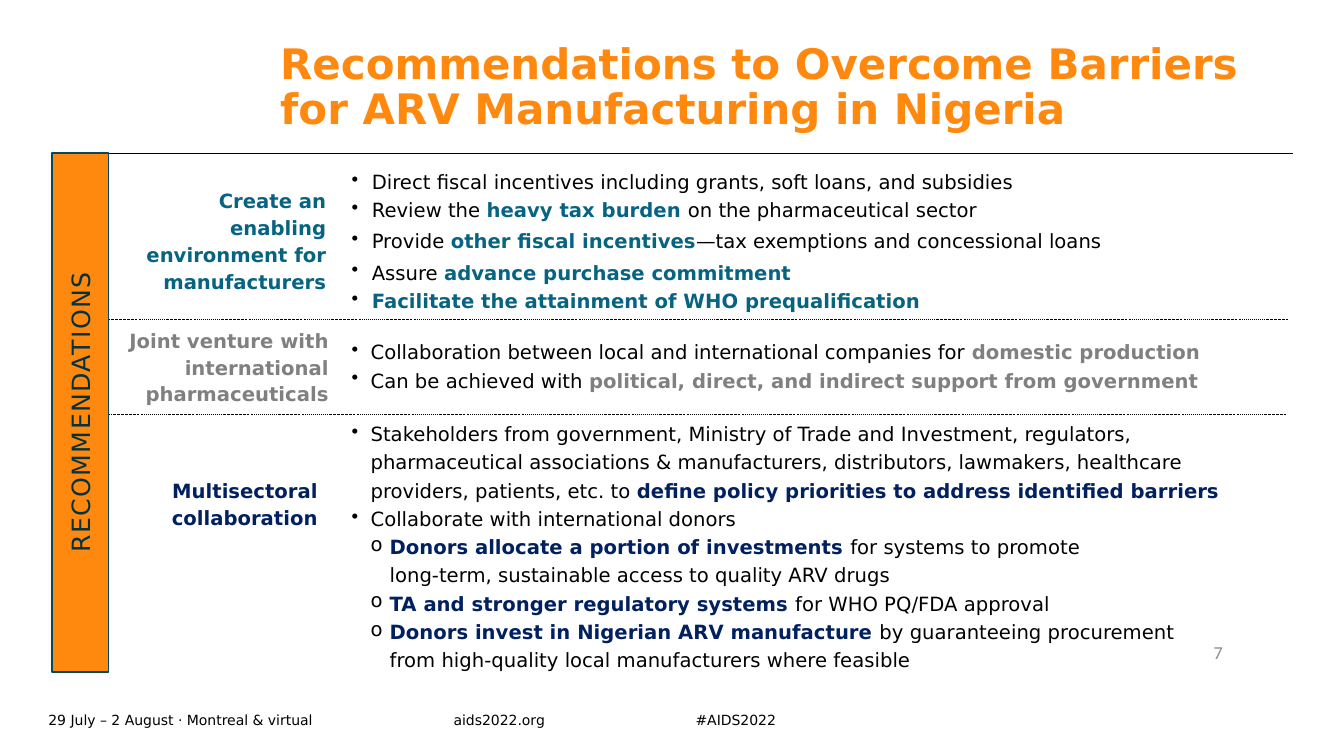
import pptx
import pptx.util
import pptx.dml.color
import pptx.enum.dml
import pptx.enum.shapes
import pptx.enum.text
import pptx.oxml.ns
from lxml import etree
from pptx.util import Cm, Pt

RGBColor = pptx.dml.color.RGBColor
ALIGN = pptx.enum.text.PP_ALIGN
ANCHOR = pptx.enum.text.MSO_ANCHOR
SHAPE = pptx.enum.shapes.MSO_SHAPE

ORANGE = RGBColor(0xFF, 0x89, 0x0E)
TEAL = RGBColor(0x07, 0x63, 0x82)
GRAY = RGBColor(0x80, 0x80, 0x80)
NAVY = RGBColor(0x00, 0x20, 0x60)
BLACK = RGBColor(0, 0, 0)
NUMBER_GRAY = RGBColor(0x8C, 0x8C, 0x8C)
BAR_LINE = RGBColor(0x05, 0x49, 0x60)
BAR_TEXT = RGBColor(0x04, 0x32, 0x41)

FONT = "DejaVu Sans"
NO_INSETS = (0, 0, 0, 0)
BODY_INSETS = (0.2, 0.13, 0.25, 0.13)
DEFAULT_INSETS = (0.25, 0.13, 0.25, 0.13)

FOOTERS = [
    (1.22, 10.21, "29 July – 2 August · Montreal & virtual"),
    (11.43, 4.9, "aids2022.org"),
    (17.53, 4.9, "#AIDS2022"),
]
RULES = [
    (1.35, 32.59, 3.86, False),
    (1.35, 32.44, 8.05, True),
    (1.3, 32.41, 10.44, True),
]
LABELS = [
    ((2.87, 4.45, 5.51, 3.18), "Create an enabling environment for manufacturers", TEAL, 0.25, 6),
    ((1.63, 8.15, 6.76, 2.13), "Joint venture with international pharmaceuticals", GRAY, 0, 6),
    ((0.51, 10.34, 7.9, 4.65), "Multisectoral \ncollaboration ", NAVY, 0, 2),
]
ENABLING = [
    (0, "Direct fiscal incentives including grants, soft loans, and subsidies"),
    (0, "Review the *heavy tax burden *on the pharmaceutical sector"),
    (0, "Provide *other fiscal incentives*—tax exemptions and concessional loans"),
    (0, "Assure *advance purchase commitment*"),
    (0, "*Facilitate the attainment of WHO prequalification*"),
]
VENTURES = [
    (0, "Collaboration between local and international companies for *domestic production*"),
    (0, "Can be achieved with *political, direct, and indirect support from government*"),
]
COLLABORATION = [
    (0, "Stakeholders from government, Ministry of Trade and Investment, regulators, "
        "pharmaceutical associations & manufacturers, distributors, lawmakers, healthcare "
        "providers, patients, etc. to *define policy priorities to address identified barriers*"),
    (0, "Collaborate with international donors"),
    (1, "*Donors allocate a portion of investments *for systems to promote \n"
        "long-term, sustainable access to quality ARV drugs"),
    (1, "*TA and stronger regulatory systems *for WHO PQ/FDA approval"),
    (1, "*Donors invest in Nigerian ARV manufacture *by guaranteeing procurement \n"
        "from high-quality local manufacturers where feasible"),
]


def place(shape, box):
    """Set left, top, width and height in centimetres."""
    shape.left, shape.top, shape.width, shape.height = map(Cm, box)


def set_frame(shape, insets, anchor):
    """Set the wrapping, insets and anchor of a shape and return its text frame."""
    frame = shape.text_frame
    frame.word_wrap = True
    frame.auto_size = pptx.enum.text.MSO_AUTO_SIZE.NONE
    frame.vertical_anchor = anchor
    frame.margin_left, frame.margin_top, frame.margin_right, frame.margin_bottom = map(Cm, insets)
    return frame


def set_font(paragraph, size, color, bold=False, name=FONT):
    """Format the font of a whole paragraph."""
    font = paragraph.font
    font.name, font.size, font.bold = name, Pt(size), bold
    font.color.rgb = color


def add_text(slide, box, text, size, color, insets=NO_INSETS, align=ALIGN.LEFT, name=FONT):
    """Add a one-paragraph text box centred vertically."""
    shape = slide.shapes.add_textbox(*map(Cm, box))
    paragraph = set_frame(shape, insets, ANCHOR.MIDDLE).paragraphs[0]
    paragraph.text = text
    paragraph.alignment = align
    set_font(paragraph, size, color, name=name)


def add_rule(slide, left, right, y, dashed):
    """Add a thin horizontal line."""
    line = slide.shapes.add_connector(
        pptx.enum.shapes.MSO_CONNECTOR.STRAIGHT, Cm(left), Cm(y), Cm(right), Cm(y))
    line.line.color.rgb = BLACK
    line.line.width = Pt(0.25)
    if dashed:
        line.line.dash_style = pptx.enum.dml.MSO_LINE.DASH_DOT
    etree.SubElement(line._element.spPr, pptx.oxml.ns.qn("a:effectLst"))


def add_label(slide, box, text, color, left_inset, space_after):
    """Add a right-aligned row heading in an unfilled rounded rectangle."""
    shape = slide.shapes.add_shape(SHAPE.ROUNDED_RECTANGLE, *map(Cm, box))
    shape.shadow.inherit = False
    shape.fill.background()
    shape.line.fill.background()
    paragraph = set_frame(shape, (left_inset, 0, 0, 0), ANCHOR.MIDDLE).paragraphs[0]
    paragraph.text = text.replace("\n", "\v")
    paragraph.alignment = ALIGN.RIGHT
    paragraph.line_spacing = 1.14
    paragraph.space_after = Pt(space_after)
    set_font(paragraph, 14, color, True)


def set_bullet(paragraph, level, indent):
    """Give a paragraph its level, hanging indent and black bullet."""
    paragraph.level = level
    properties = paragraph._p.get_or_add_pPr()
    properties.set("marL", str(Cm(indent * (level + 1))))
    properties.set("indent", str(-Cm(indent)))
    bullet_color = etree.SubElement(properties, pptx.oxml.ns.qn("a:buClr"))
    etree.SubElement(bullet_color, pptx.oxml.ns.qn("a:srgbClr"), val=str(BLACK))
    bullet = etree.SubElement(properties, pptx.oxml.ns.qn("a:buChar"))
    bullet.set("char", "•o"[level])


def add_bullets(slide, box, items, accent, indent=0.48, spaced=None):
    """Add a bulleted list in which starred passages are bold and accented."""
    shape = slide.shapes.add_textbox(*map(Cm, box))
    frame = set_frame(shape, BODY_INSETS, ANCHOR.TOP)
    for index, (level, text) in enumerate(items):
        paragraph = frame.add_paragraph() if index else frame.paragraphs[0]
        paragraph.line_spacing = 1.2
        if index == spaced:
            paragraph.space_before = paragraph.space_after = Pt(2)
        set_bullet(paragraph, level, indent)
        set_font(paragraph, 14, BLACK)
        for position, passage in enumerate(text.split("*")):
            for line_number, line in enumerate(passage.split("\n")):
                if line_number:
                    paragraph.add_line_break()
                if line:
                    run = paragraph.add_run()
                    run.text = line
                    if position % 2:
                        run.font.bold = True
                        run.font.color.rgb = accent


def add_title(slide, text):
    """Place and format the slide title."""
    title = slide.shapes.title
    place(title, (7.06, 1.09, 25.53, 2.54))
    paragraph = set_frame(title, NO_INSETS, ANCHOR.TOP).paragraphs[0]
    paragraph.text = text
    paragraph.alignment = ALIGN.LEFT
    paragraph.line_spacing = 0.9
    set_font(paragraph, 30, ORANGE, True)


def add_side_bar(slide, text):
    """Add the upright orange bar with letter-spaced text."""
    bar = slide.shapes.add_shape(SHAPE.RECTANGLE, *map(Cm, (-4.52, 9.68, 13.08, 1.42)))
    bar.rotation = 270
    bar.shadow.inherit = False
    bar.fill.solid()
    bar.fill.fore_color.rgb = ORANGE
    bar.line.color.rgb = BAR_LINE
    bar.line.width = Pt(1)
    paragraph = set_frame(bar, DEFAULT_INSETS, ANCHOR.MIDDLE).paragraphs[0]
    paragraph.text = text
    paragraph.alignment = ALIGN.CENTER
    set_font(paragraph, 18, BAR_TEXT)
    paragraph.runs[0]._r.get_or_add_rPr().set("spc", "100")


def main():
    """Build the recommendations slide and save it."""
    presentation = pptx.Presentation()
    presentation.slide_width, presentation.slide_height = Cm(33.87), Cm(19.05)
    slide = presentation.slides.add_slide(presentation.slide_layouts[5])
    add_title(slide, "Recommendations to Overcome Barriers for ARV Manufacturing in Nigeria")
    for left, width, text in FOOTERS:
        add_text(slide, (left, 17.83, width, 0.61), text, 10, BLACK)
    for rule in RULES:
        add_rule(slide, *rule)
    for label in LABELS:
        add_label(slide, *label)
    add_bullets(slide, (8.66, 4.04, 23.65, 4.01), ENABLING, TEAL, indent=0.51, spaced=2)
    add_bullets(slide, (8.66, 8.33, 22.81, 1.68), VENTURES, GRAY)
    add_bullets(slide, (8.66, 10.39, 22.81, 8.38), COLLABORATION, NAVY)
    add_text(slide, (28.4, 15.93, 2.67, 1.02), "7", 13, NUMBER_GRAY,
             DEFAULT_INSETS, ALIGN.RIGHT, "Calibri")
    add_side_bar(slide, "RECOMMENDATIONS")
    presentation.save("out.pptx")


if __name__ == "__main__":
    main()
